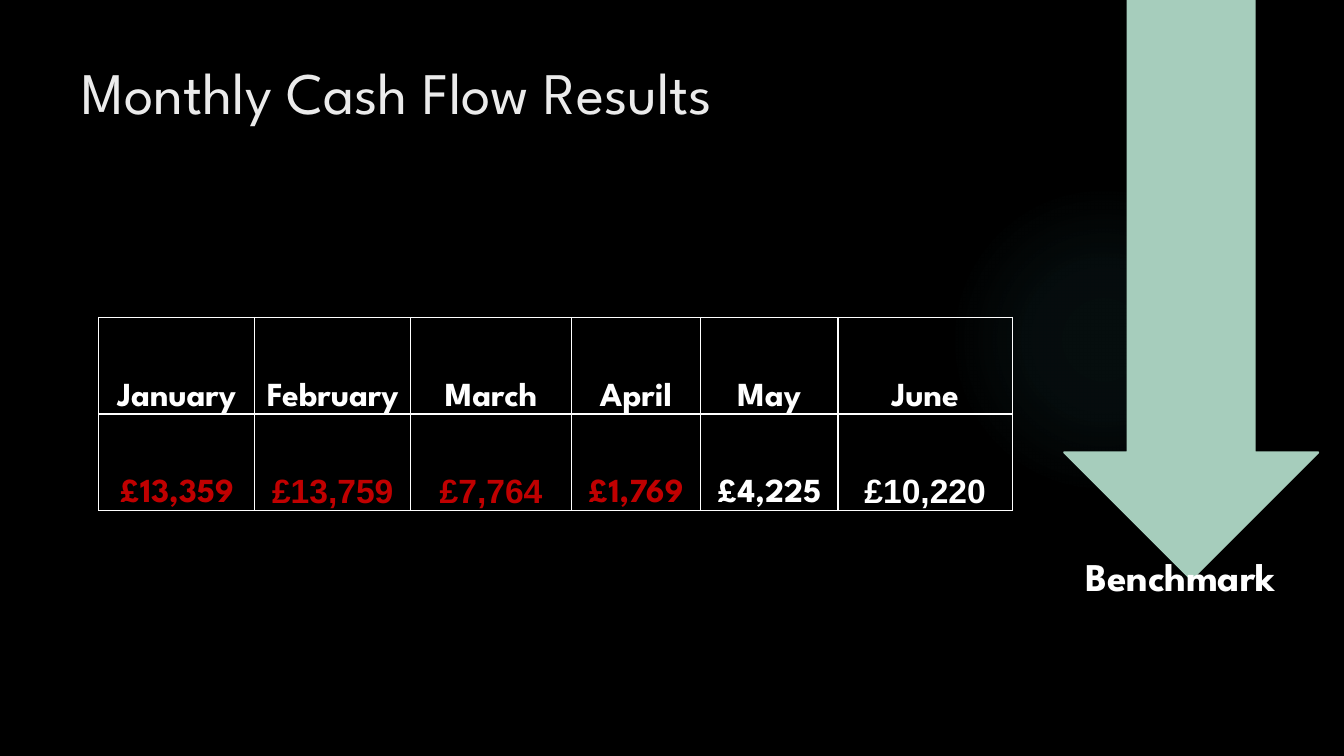
from dataclasses import dataclass

from lxml import etree
from pptx import Presentation
from pptx.dml.color import RGBColor
from pptx.enum.shapes import MSO_SHAPE
from pptx.enum.text import MSO_ANCHOR, MSO_AUTO_SIZE, PP_ALIGN
from pptx.oxml import parse_xml
from pptx.oxml.ns import nsdecls
from pptx.util import Cm, Pt

OVAL, DOWN_ARROW = MSO_SHAPE.OVAL, MSO_SHAPE.DOWN_ARROW
TOP, BOTTOM = MSO_ANCHOR.TOP, MSO_ANCHOR.BOTTOM
LEFT, CENTER = PP_ALIGN.LEFT, PP_ALIGN.CENTER
FIT_SHAPE = MSO_AUTO_SIZE.SHAPE_TO_FIT_TEXT
TITLE_ONLY = 5


@dataclass(frozen=True)
class Theme:
    background: str = "000000"
    title: str = "EBEBEB"
    text: str = "FFFFFF"
    negative: str = "C00000"
    arrow: str = "A6CDBC"
    glow: str = "50B9C1"
    font: str = "League Spartan"
    number_font: str = "Arial"
    title_size: int = 42
    label_size: int = 28
    table_size: int = 24


THEME = Theme()

# month, amount, amount colour, amount font
CASH_FLOW = [
    ("January", "£13,359", THEME.negative, THEME.font),
    ("February", "£13,759", THEME.negative, THEME.number_font),
    ("March", "£7,764", THEME.negative, THEME.number_font),
    ("April", "£1,769", THEME.negative, THEME.font),
    ("May", "£4,225", THEME.text, THEME.font),
    ("June", "£10,220", THEME.text, THEME.number_font),
]
COLUMN_WIDTHS = [3.93, 3.93, 4.05, 3.25, 3.47, 4.39]


def write(text_frame, text, size, color, font=THEME.font, bold=False, align=LEFT):
    text_frame.text = text
    paragraph = text_frame.paragraphs[0]
    paragraph.alignment = align
    run_font = paragraph.runs[0].font
    run_font.name = font
    run_font.size = Pt(size)
    run_font.bold = bold
    run_font.color.rgb = RGBColor.from_string(color)


def add_glow(slide, left, top, size):
    glow = slide.shapes.add_shape(OVAL, Cm(left), Cm(top), Cm(size), Cm(size))
    glow.shadow.inherit = False
    glow.line.fill.background()
    # Radial fade from the centre to clear
    stops = "".join(
        f'<a:gs pos="{position * 1000}"><a:srgbClr val="{THEME.glow}">'
        f'<a:alpha val="{opacity * 1000}"/></a:srgbClr></a:gs>'
        for position, opacity in ((0, 7), (36, 6), (69, 0))
    )
    gradient = parse_xml(
        f'<a:gradFill {nsdecls("a")}><a:gsLst>{stops}</a:gsLst><a:path path="circle">'
        '<a:fillToRect l="50000" t="50000" r="50000" b="50000"/></a:path></a:gradFill>'
    )
    glow.fill.background()
    no_fill = glow.element.spPr.find("a:noFill", {"a": gradient.nsmap["a"]})
    glow.element.spPr.replace(no_fill, gradient)


def add_benchmark(slide, left, top, width, height):
    # Arrow
    arrow = slide.shapes.add_shape(DOWN_ARROW, Cm(left), Cm(top), Cm(width), Cm(height))
    arrow.shadow.inherit = False
    arrow.fill.solid()
    arrow.fill.fore_color.rgb = RGBColor.from_string(THEME.arrow)
    arrow.line.color.rgb = RGBColor.from_string(THEME.arrow)
    arrow.line.width = Pt(1.5)
    # Label over the arrow tip
    label = slide.shapes.add_textbox(
        Cm(left + 0.28), Cm(top + height - 0.81), Cm(6.05), Cm(1.45))
    label.text_frame.word_wrap = False
    label.text_frame.auto_size = FIT_SHAPE
    write(label.text_frame, "Benchmark", THEME.label_size, THEME.text, bold=True)


def add_title(slide, left, top, width, height):
    title = slide.shapes.title
    title.left, title.top = Cm(left), Cm(top)
    title.width, title.height = Cm(width), Cm(height)
    title.text_frame.vertical_anchor = TOP
    write(title.text_frame, "Monthly Cash Flow Results", THEME.title_size, THEME.title)


def add_borders(cell):
    properties = cell._tc.get_or_add_tcPr()
    for index, side in enumerate(("lnL", "lnR", "lnT", "lnB")):
        border = parse_xml(
            f'<a:{side} {nsdecls("a")} w="{Pt(1)}"><a:solidFill>'
            f'<a:srgbClr val="{THEME.text}"/></a:solidFill></a:{side}>'
        )
        properties.insert(index, border)
    etree.cleanup_namespaces(properties)


def format_cell(cell, text, color, font):
    cell.fill.background()
    cell.vertical_anchor = BOTTOM
    cell.margin_left = cell.margin_right = cell.margin_top = Cm(0.03)
    cell.margin_bottom = 0
    write(cell.text_frame, text, THEME.table_size, color, font, True, CENTER)
    add_borders(cell)


def add_cash_flow_table(slide, left, top, height):
    frame = slide.shapes.add_table(
        2, len(CASH_FLOW), Cm(left), Cm(top), Cm(sum(COLUMN_WIDTHS)), Cm(height))
    table = frame.table
    table.first_row = table.horz_banding = False
    for row in table.rows:
        row.height = Cm(height / 2)
    for index, (month, amount, color, font) in enumerate(CASH_FLOW):
        table.columns[index].width = Cm(COLUMN_WIDTHS[index])
        format_cell(table.cell(0, index), month, THEME.text, THEME.font)
        format_cell(table.cell(1, index), amount, color, font)


def main():
    presentation = Presentation()
    presentation.slide_width, presentation.slide_height = Cm(33.87), Cm(19.05)
    slide = presentation.slides.add_slide(presentation.slide_layouts[TITLE_ONLY])
    slide.background.fill.solid()
    slide.background.fill.fore_color.rgb = RGBColor.from_string(THEME.background)

    add_glow(slide, 23.9, 4.65, 7.82)
    add_benchmark(slide, 26.82, 0, 6.4, 14.6)
    add_title(slide, 1.8, 1.27, 26.14, 3.89)
    add_cash_flow_table(slide, 2.49, 8, 4.86)
    presentation.save("out.pptx")


if __name__ == "__main__":
    main()
